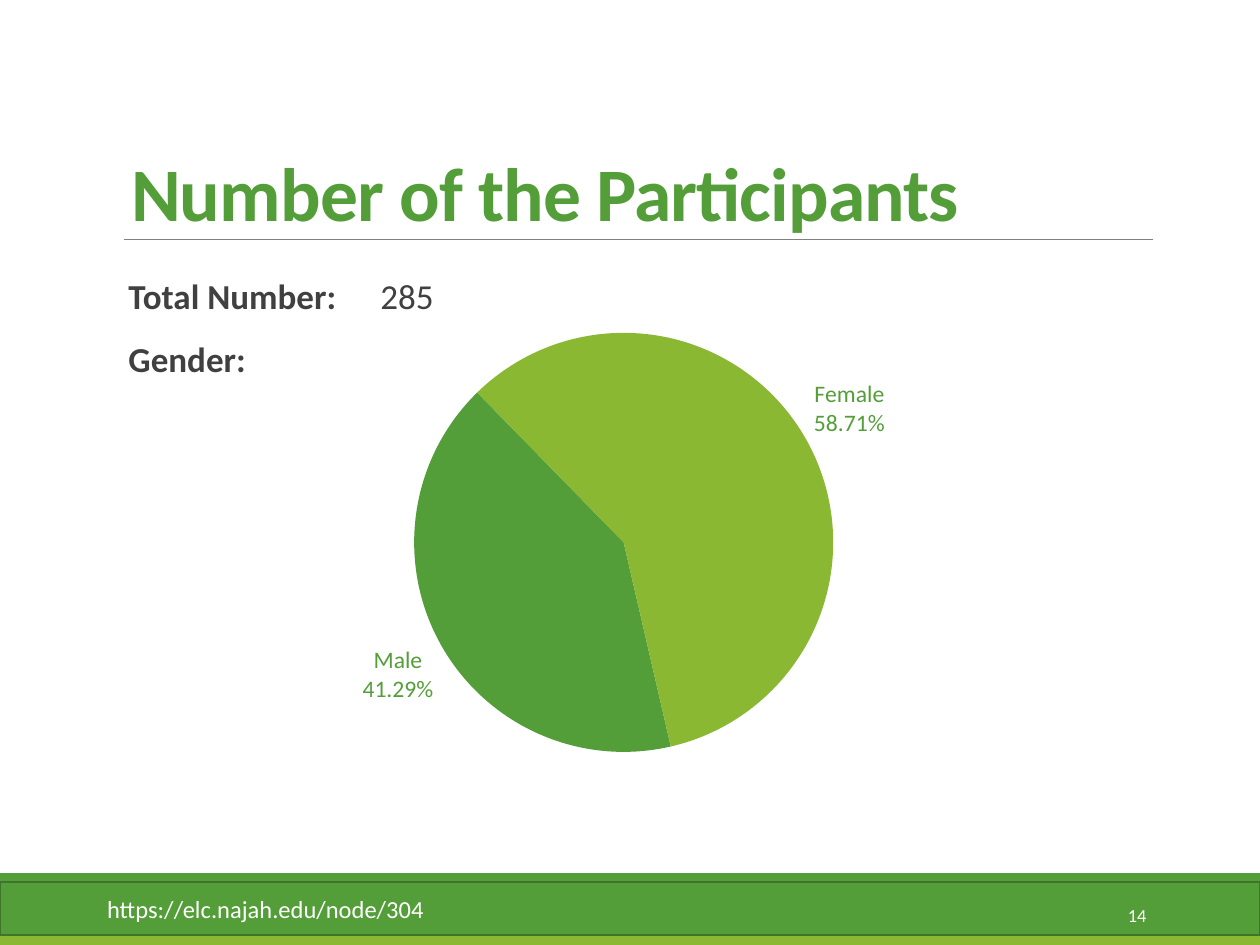
from lxml.etree import SubElement
from pptx import Presentation
from pptx.chart.data import CategoryChartData
from pptx.dml.color import RGBColor
from pptx.enum.chart import XL_CHART_TYPE, XL_LABEL_POSITION
from pptx.enum.shapes import MSO_CONNECTOR, MSO_SHAPE
from pptx.enum.text import MSO_ANCHOR, MSO_AUTO_SIZE, PP_ALIGN
from pptx.oxml import parse_xml
from pptx.oxml.ns import nsdecls, qn
from pptx.util import Cm, Pt

GREEN = RGBColor(0x54, 0x9E, 0x39)
LIME = RGBColor(0x8A, 0xB8, 0x33)
DARK_GREEN = RGBColor(0x3E, 0x75, 0x2A)
GRAY = RGBColor(0x80, 0x80, 0x80)
TEXT = RGBColor(0x40, 0x40, 0x40)
WHITE = RGBColor(0xFF, 0xFF, 0xFF)
FONT = "Calibri"
PAGE_WIDTH, PAGE_HEIGHT = 25.4, 19.05


class SlideBuilder:
    """Holds the style and the page being drawn; lengths are in centimetres."""

    def __init__(self, page):
        self.page = page

    def place(self, box, left, top, width, height):
        box.left, box.top = Cm(left), Cm(top)
        box.width, box.height = Cm(width), Cm(height)

    def style(self, font, size, color, bold=False):
        font.name, font.size, font.bold = FONT, Pt(size), bold
        font.color.rgb = color

    def span(self, para, text, size, color, bold=False):
        span = para.add_run()
        span.text = text
        self.style(span.font, size, color, bold)
        return span

    def band(self, top, height, color, outline=None):
        band = self.page.shapes.add_shape(
            MSO_SHAPE.RECTANGLE, 0, Cm(top), Cm(PAGE_WIDTH), Cm(height))
        band.shadow.inherit = False
        band.fill.solid()
        band.fill.fore_color.rgb = color
        if outline is None:
            band.line.fill.background()
        else:
            band.line.color.rgb = outline
            band.line.width = Pt(1.25)
        return band

    def rule(self, left, right, top):
        rule = self.page.shapes.add_connector(
            MSO_CONNECTOR.STRAIGHT, Cm(left), Cm(top), Cm(right), Cm(top))
        rule.line.color.rgb = GRAY
        rule.line.width = Pt(0.5)
        SubElement(rule._element.spPr, qn("a:effectLst"))

    def title(self, text, *area):
        box = self.page.shapes.title
        self.place(box, *area)
        frame = box.text_frame
        frame.auto_size = MSO_AUTO_SIZE.NONE
        frame.vertical_anchor = MSO_ANCHOR.BOTTOM
        para = frame.paragraphs[0]
        para.alignment = PP_ALIGN.LEFT
        para.line_spacing = 0.85
        span = self.span(para, text, 43.2, GREEN, bold=True)
        span._r.get_or_add_rPr().set("spc", "-50")

    def facts(self, rows, tab, *area):
        """Fill the body with bold labels and values aligned at a tab stop."""
        box = self.page.placeholders[1]
        self.place(box, *area)
        frame = box.text_frame
        frame.auto_size = MSO_AUTO_SIZE.NONE
        frame.margin_left, frame.margin_right = Cm(0.25), 0
        for index, (label, value) in enumerate(rows):
            para = frame.add_paragraph() if index else frame.paragraphs[0]
            properties = para._p.get_or_add_pPr()
            properties.set("marL", "0")
            properties.set("indent", "0")
            SubElement(properties, qn("a:buNone"))
            tabs = SubElement(properties, qn("a:tabLst"))
            SubElement(tabs, qn("a:tab"), pos=str(Cm(tab)), algn="l")
            para.line_spacing = 0.9
            para.space_before = Pt(12 if index else 0)
            para.space_after = Pt(2)
            self.span(para, label, 20, TEXT, bold=True)
            if value:
                self.span(para, "\t" + value, 20, TEXT)

    def footer(self, text, top, height):
        frame = self.band(top, height, GREEN, DARK_GREEN).text_frame
        frame.margin_left = Cm(2.16)
        frame.vertical_anchor = MSO_ANCHOR.MIDDLE
        para = frame.paragraphs[0]
        para.alignment = PP_ALIGN.LEFT
        self.span(para, text, 14, WHITE)

    def page_number(self, text, *area):
        frame = self.page.shapes.add_textbox(*map(Cm, area)).text_frame
        frame.word_wrap = True
        frame.vertical_anchor = MSO_ANCHOR.MIDDLE
        para = frame.paragraphs[0]
        para.alignment = PP_ALIGN.RIGHT
        self.span(para, text, 10.5, WHITE)

    def pie(self, slices, start_angle, plot_area, *area):
        """Draw (name, percent, color) slices; plot_area is in chart fractions."""
        names, percents, colors = zip(*slices)
        data = CategoryChartData(number_format='0.00"%"')
        data.categories = names
        data.add_series("Series 1", percents)
        chart = self.page.shapes.add_chart(
            XL_CHART_TYPE.PIE, *map(Cm, area), data).chart
        chart.has_title = chart.has_legend = False
        chart.font.name, chart.font.size = FONT, Pt(10)
        plot = chart.plots[0]
        plot.vary_by_categories = True
        series = plot.series[0]
        for index, color in enumerate(colors):
            fill = series.points[index].format.fill
            fill.solid()
            fill.fore_color.rgb = color

        labels = series.data_labels
        labels.show_category_name = labels.show_value = True
        labels.number_format, labels.number_format_is_linked = '0.00"%"', False
        labels.position = XL_LABEL_POSITION.OUTSIDE_END
        self.style(labels.font, 13.5, GREEN)
        separator = parse_xml(f'<c:separator {nsdecls("c")}>\n</c:separator>')
        labels._element.find(qn("c:showBubbleSize")).addnext(separator)

        pie = plot._element
        angle = pie.find(qn("c:firstSliceAng"))
        if angle is None:
            angle = SubElement(pie, qn("c:firstSliceAng"))
        angle.set("val", str(start_angle))

        plot_element = pie.getparent()
        for layout in plot_element.findall(qn("c:layout")):
            plot_element.remove(layout)
        sizes = "".join(f'<c:{key} val="{value}"/>'
                        for key, value in zip("xywh", plot_area))
        plot_element.insert(0, parse_xml(
            f'<c:layout {nsdecls("c")}><c:manualLayout>'
            '<c:layoutTarget val="inner"/>'
            '<c:xMode val="edge"/><c:yMode val="edge"/>'
            f'{sizes}</c:manualLayout></c:layout>'))


def main():
    deck = Presentation()
    deck.slide_width, deck.slide_height = Cm(PAGE_WIDTH), Cm(PAGE_HEIGHT)
    builder = SlideBuilder(deck.slides.add_slide(deck.slide_layouts[1]))

    builder.band(17.78, 1.27, LIME)
    builder.band(17.6, 0.18, GREEN)
    builder.rule(2.49, 23.24, 4.83)
    builder.footer("https://elc.najah.edu/node/304", 17.78, 1.07)
    builder.title("Number of the Participants", 2.39, 1.73, 21.59, 3.17)
    builder.facts([("Total Number:", "285"), ("Gender:", "")], 4.68,
                  2.34, 5.51, 22.86, 12.24)
    builder.page_number("14", 20.62, 17.93, 2.74, 1.02)
    builder.pie([("Male", 41.29, GREEN), ("Female", 58.71, LIME)], 167,
                (0.275, 0.127, 0.5, 0.749), 3.68, 5.28, 16.94, 11.28)
    deck.save("out.pptx")


if __name__ == "__main__":
    main()
